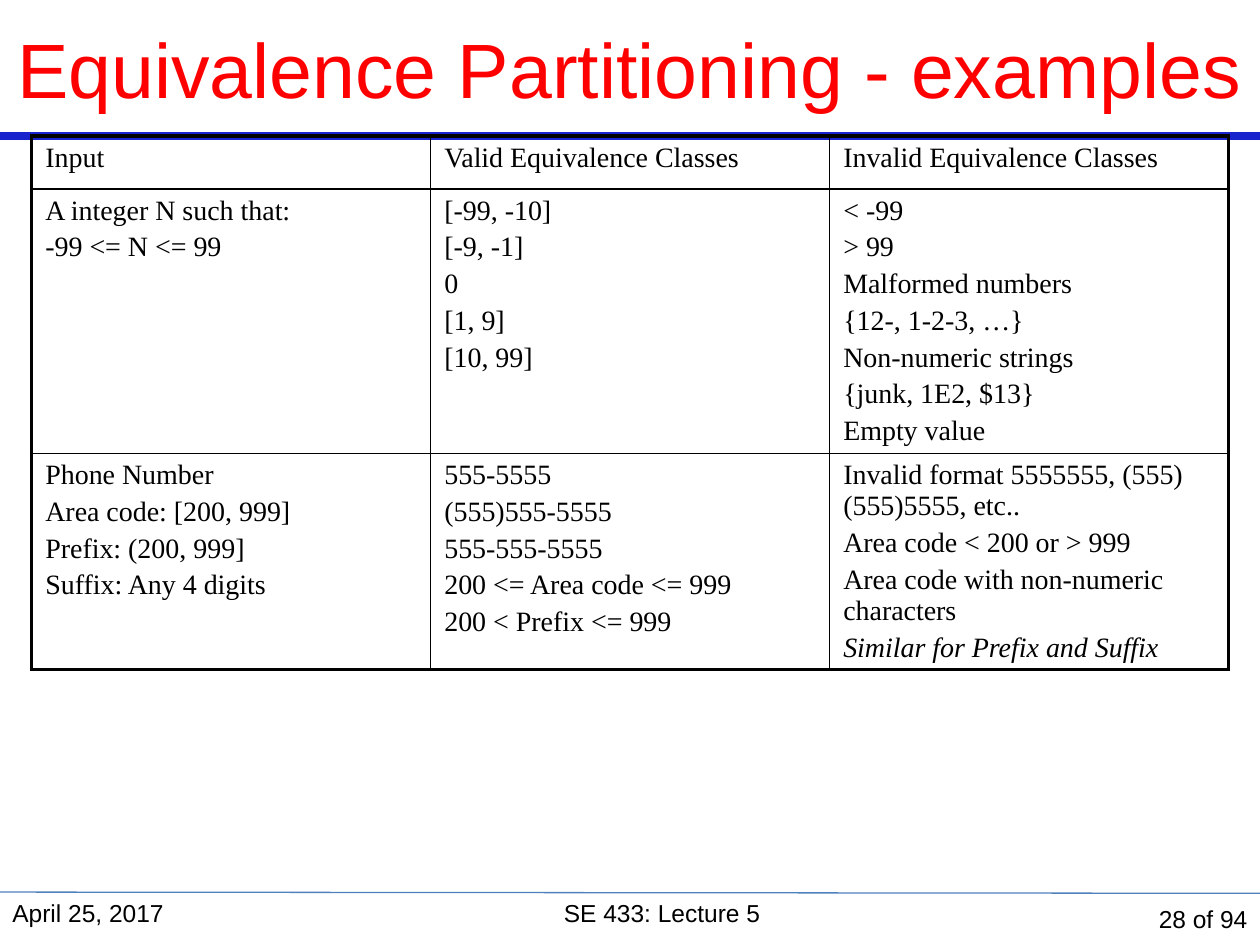
"""Build the equivalence partitioning examples slide."""
import lxml.etree
import pptx
import pptx.dml.color
import pptx.enum.shapes
import pptx.enum.text
import pptx.oxml.ns
import pptx.util
from pptx.util import Inches

COLORS = {"title": "FF0000", "rule": "1822CD", "footer_rule": "4F81BD", "ink": "000000"}
ALIGN = pptx.enum.text.PP_ALIGN
ANCHOR = pptx.enum.text.MSO_ANCHOR
qn = pptx.oxml.ns.qn

ROWS = [
    [["Input"], ["Valid Equivalence Classes"], ["Invalid Equivalence Classes"]],
    [
        ["A integer N such that:", "-99 <= N <= 99"],
        ["[-99, -10]", "[-9, -1]", "0", "[1, 9]", "[10, 99]"],
        ["< -99", "> 99", "Malformed numbers", "{12-, 1-2-3, …}",
         "Non-numeric strings", "{junk, 1E2, $13}", "Empty value"],
    ],
    [
        ["Phone Number", "Area code: [200, 999]", "Prefix: (200, 999]",
         "Suffix: Any 4 digits"],
        ["555-5555", "(555)555-5555", "555-555-5555",
         "200 <= Area code <= 999", "200 < Prefix <= 999"],
        ["Invalid format 5555555, (555)(555)5555, etc..",
         "Area code < 200 or > 999", "Area code with non-numeric characters",
         "Similar for Prefix and Suffix"],
    ],
]
ROW_HEIGHTS = [0.42, 2.1, 1.71]
ITALIC_TEXT = "Similar for Prefix and Suffix"


def rgb(name):
    return pptx.dml.color.RGBColor.from_string(COLORS[name])


def style_paragraph(paragraph, font_name, size, color="ink", align=ALIGN.LEFT):
    paragraph.alignment = align
    paragraph.font.name = font_name
    paragraph.font.size = pptx.util.Pt(size)
    paragraph.font.color.rgb = rgb(color)


def add_title(slide, text):
    title = slide.shapes.title
    title.left, title.top = Inches(0), Inches(0)
    title.width, title.height = Inches(10), Inches(1.08)
    title.text_frame.text = text
    title.text_frame.vertical_anchor = ANCHOR.MIDDLE
    style_paragraph(title.text_frame.paragraphs[0], "Arial", 44, "title", ALIGN.CENTER)


def add_rule(slide, start_y, end_y, color, width):
    rule = slide.shapes.add_connector(
        pptx.enum.shapes.MSO_CONNECTOR.STRAIGHT,
        Inches(0), Inches(start_y), Inches(10), Inches(end_y))
    rule.line.color.rgb = rgb(color)
    rule.line.width = pptx.util.Pt(width)
    lxml.etree.SubElement(rule._element.spPr, qn("a:effectLst"))


def set_borders(cell, widths):
    properties = cell._tc.get_or_add_tcPr()
    for index, (side, width) in enumerate(zip("LRTB", widths)):
        border = lxml.etree.Element(qn(f"a:ln{side}"), w=str(pptx.util.Pt(width)))
        fill = lxml.etree.SubElement(border, qn("a:solidFill"))
        lxml.etree.SubElement(fill, qn("a:srgbClr"), val=COLORS["ink"])
        properties.insert(index, border)


def fill_cell(cell, lines):
    cell.fill.background()
    cell.margin_left = cell.margin_right = Inches(0.11)
    cell.margin_top = cell.margin_bottom = Inches(0.05)
    cell.text = "\n".join(lines)
    for paragraph in cell.text_frame.paragraphs:
        style_paragraph(paragraph, "Times New Roman", 16)
        paragraph.space_before = pptx.util.Pt(3.2)
        if paragraph.text == ITALIC_TEXT:
            paragraph.font.italic = True


def add_examples_table(slide):
    row_count, column_count = len(ROWS), len(ROWS[0])
    table = slide.shapes.add_table(
        row_count, column_count, Inches(0.25), Inches(1.08),
        Inches(9.5), Inches(sum(ROW_HEIGHTS))).table
    table.first_row = table.horz_banding = False
    for row_index, row in enumerate(ROWS):
        table.rows[row_index].height = Inches(ROW_HEIGHTS[row_index])
        for column_index, lines in enumerate(row):
            cell = table.cell(row_index, column_index)
            fill_cell(cell, lines)
            outer = (column_index == 0, column_index == column_count - 1,
                     row_index == 0, row_index == row_count - 1)
            set_borders(cell, [2.25 if edge else 1 for edge in outer])


def add_footer(slide, text, left, width, align, anchor=ANCHOR.TOP):
    box = slide.shapes.add_textbox(Inches(left), Inches(7.08), Inches(width), Inches(0.42))
    frame = box.text_frame
    frame.word_wrap = True
    frame.vertical_anchor = anchor
    frame.text = text
    style_paragraph(frame.paragraphs[0], "Arial", 14, align=align)


def main():
    presentation = pptx.Presentation()
    presentation.slide_width, presentation.slide_height = Inches(10), Inches(7.5)
    slide = presentation.slides.add_slide(presentation.slide_layouts[5])
    add_rule(slide, 1.08, 1.08, "rule", 4.5)
    add_rule(slide, 7.08, 7.09, "footer_rule", 0.75)
    add_title(slide, "Equivalence Partitioning - examples")
    add_examples_table(slide)
    add_footer(slide, "April 25, 2017", 0, 2.17, ALIGN.LEFT)
    add_footer(slide, "SE 433: Lecture 5", 2.17, 6.17, ALIGN.CENTER)
    add_footer(slide, "28 of 94", 8.33, 1.67, ALIGN.RIGHT, ANCHOR.MIDDLE)
    presentation.save("out.pptx")


if __name__ == "__main__":
    main()
